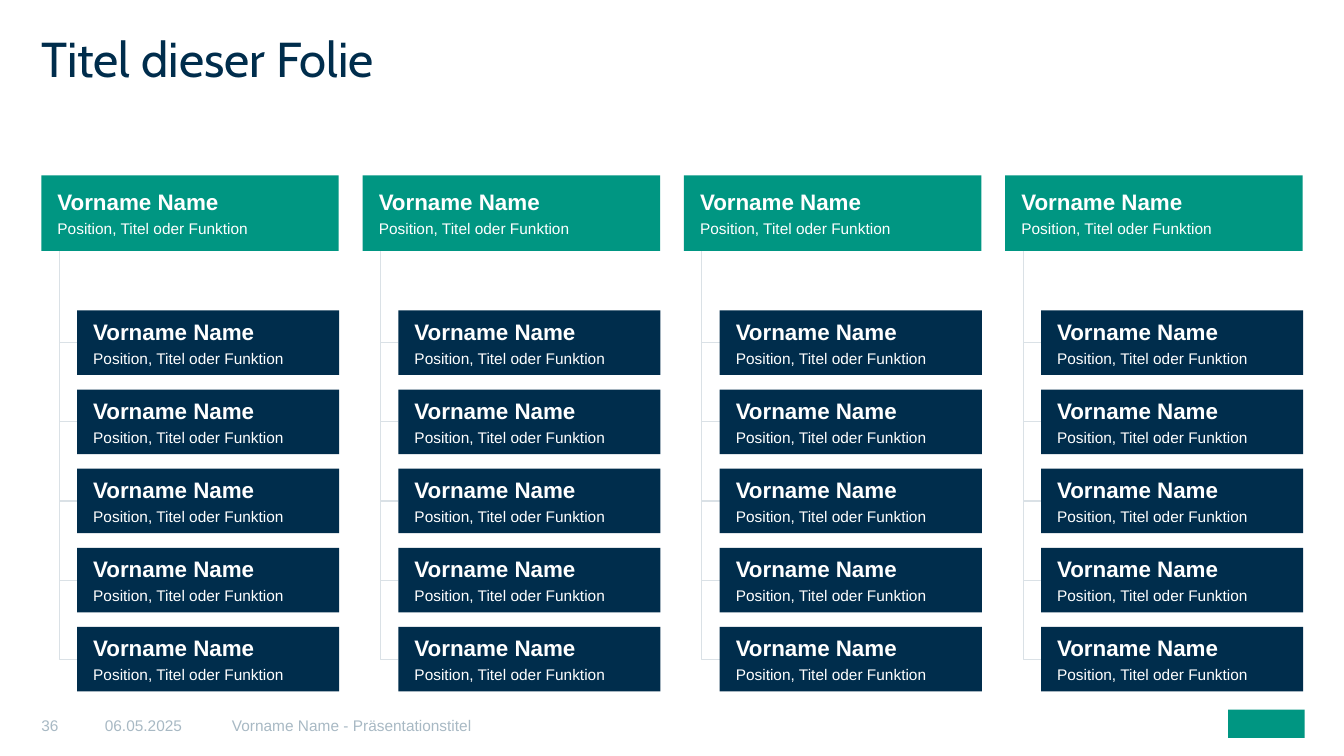
from dataclasses import dataclass

from lxml.etree import SubElement
from pptx import Presentation
from pptx.dml.color import RGBColor
from pptx.enum.shapes import MSO_CONNECTOR, MSO_SHAPE
from pptx.enum.text import MSO_ANCHOR, PP_ALIGN
from pptx.oxml.ns import qn
from pptx.util import Inches, Pt


@dataclass(frozen=True)
class Theme:
    navy: str = "002D4C"
    green: str = "009682"
    white: str = "FFFFFF"
    footer: str = "A8B9C4"
    line: str = "DAE1E6"
    heading: str = "Cabin"
    body: str = "Arial"
    title_size: int = 35
    name_size: int = 16
    small_size: int = 11
    line_width: float = 0.75


THEME = Theme()
NAME = "Vorname Name"
ROLE = "Position, Titel oder Funktion"
COLUMNS, ROWS = 4, 5
COLUMN_LEFT, COLUMN_PITCH = 0.41, (9.97 - 0.41) / (COLUMNS - 1)
HEAD_TOP, HEAD_W, HEAD_H = 1.74, 2.95, 0.75
MEMBER_INDENT, MEMBER_W, MEMBER_H = 0.355, 2.6, 0.64
MEMBER_TOP, ROW_PITCH = 3.08, (6.22 - 3.08) / (ROWS - 1)
FOOTER_TOP, FOOTER_H = 6.86, 0.64
FOOTER = [
    (0.41, 0.63, "36"),
    (1.04, 1.26, "06.05.2025"),
    (2.3, 6.38, "Vorname Name - Präsentationstitel"),
]


def set_attrs(obj, values):
    for key, value in values.items():
        setattr(obj, key, value)


def set_frame(tf, anchor, left=0, top=0, right=0, bottom=0):
    set_attrs(tf, {
        "word_wrap": True,
        "vertical_anchor": anchor,
        "margin_left": Inches(left),
        "margin_top": Inches(top),
        "margin_right": Inches(right),
        "margin_bottom": Inches(bottom),
    })


def write(p, text, size, color, font=THEME.body, bold=False, **spacing):
    set_attrs(p, {"alignment": PP_ALIGN.LEFT, **spacing})
    r = p.add_run()
    r.text = text
    set_attrs(r.font, {"name": font, "size": Pt(size), "bold": bold})
    r.font.color.rgb = RGBColor.from_string(color)


def add_rect(s, x, y, w, h, color):
    sp = s.shapes.add_shape(
        MSO_SHAPE.RECTANGLE, Inches(x), Inches(y), Inches(w), Inches(h))
    sp.shadow.inherit = False
    sp.fill.solid()
    sp.fill.fore_color.rgb = RGBColor.from_string(color)
    sp.line.fill.background()
    return sp


def add_person(s, x, y, w, h, color):
    tf = add_rect(s, x, y, w, h, color).text_frame
    set_frame(tf, MSO_ANCHOR.MIDDLE, 0.16, 0.16, 0.16, 0.16)
    write(tf.paragraphs[0], NAME, THEME.name_size, THEME.white,
          bold=True, space_after=Pt(3))
    write(tf.add_paragraph(), ROLE, THEME.small_size, THEME.white)


def add_text(s, x, y, w, h):
    sp = s.shapes.add_textbox(Inches(x), Inches(y), Inches(w), Inches(h))
    return sp.text_frame


def add_elbow(s, x1, y1, x2, y2):
    run, drop = x2 - x1, y2 - y1
    cx, cy = (x1 + x2) / 2, (y1 + y2) / 2
    c = s.shapes.add_connector(
        MSO_CONNECTOR.ELBOW,
        Inches(cx + drop / 2), Inches(cy - run / 2),
        Inches(cx - drop / 2), Inches(cy + run / 2))
    c.line.color.rgb = RGBColor.from_string(THEME.line)
    c.line.width = Pt(THEME.line_width)
    spPr = c._element.spPr
    spPr.find(qn("a:xfrm")).set("rot", "16200000")
    spPr.find(qn("a:prstGeom")).set("prst", "bentConnector2")
    SubElement(spPr, qn("a:effectLst"))


def add_team(s, x):
    member_x = x + MEMBER_INDENT
    add_person(s, x, HEAD_TOP, HEAD_W, HEAD_H, THEME.green)
    for row in range(ROWS):
        y = MEMBER_TOP + row * ROW_PITCH
        add_elbow(s, x + MEMBER_INDENT / 2, HEAD_TOP + HEAD_H,
                  member_x, y + MEMBER_H / 2)
        add_person(s, member_x, y, MEMBER_W, MEMBER_H, THEME.navy)


def add_title(s, text):
    tf = add_text(s, 0.41, 0.4, 12.52, 1.1)
    set_frame(tf, MSO_ANCHOR.TOP)
    write(tf.paragraphs[0], text, THEME.title_size, THEME.navy,
          font=THEME.heading, line_spacing=0.8)


def add_footer(s):
    for x, w, text in FOOTER:
        tf = add_text(s, x, FOOTER_TOP, w, FOOTER_H)
        set_frame(tf, MSO_ANCHOR.MIDDLE, top=0.04)
        write(tf.paragraphs[0], text, THEME.small_size, THEME.footer)
    add_rect(s, 12.18, 7.04, 0.76, 0.28, THEME.green)


def main():
    prs = Presentation()
    prs.slide_width, prs.slide_height = Inches(13.33), Inches(7.5)
    s = prs.slides.add_slide(prs.slide_layouts[6])
    add_title(s, "Titel dieser Folie")
    for column in range(COLUMNS):
        add_team(s, COLUMN_LEFT + column * COLUMN_PITCH)
    add_footer(s)
    prs.save("out.pptx")


if __name__ == "__main__":
    main()
